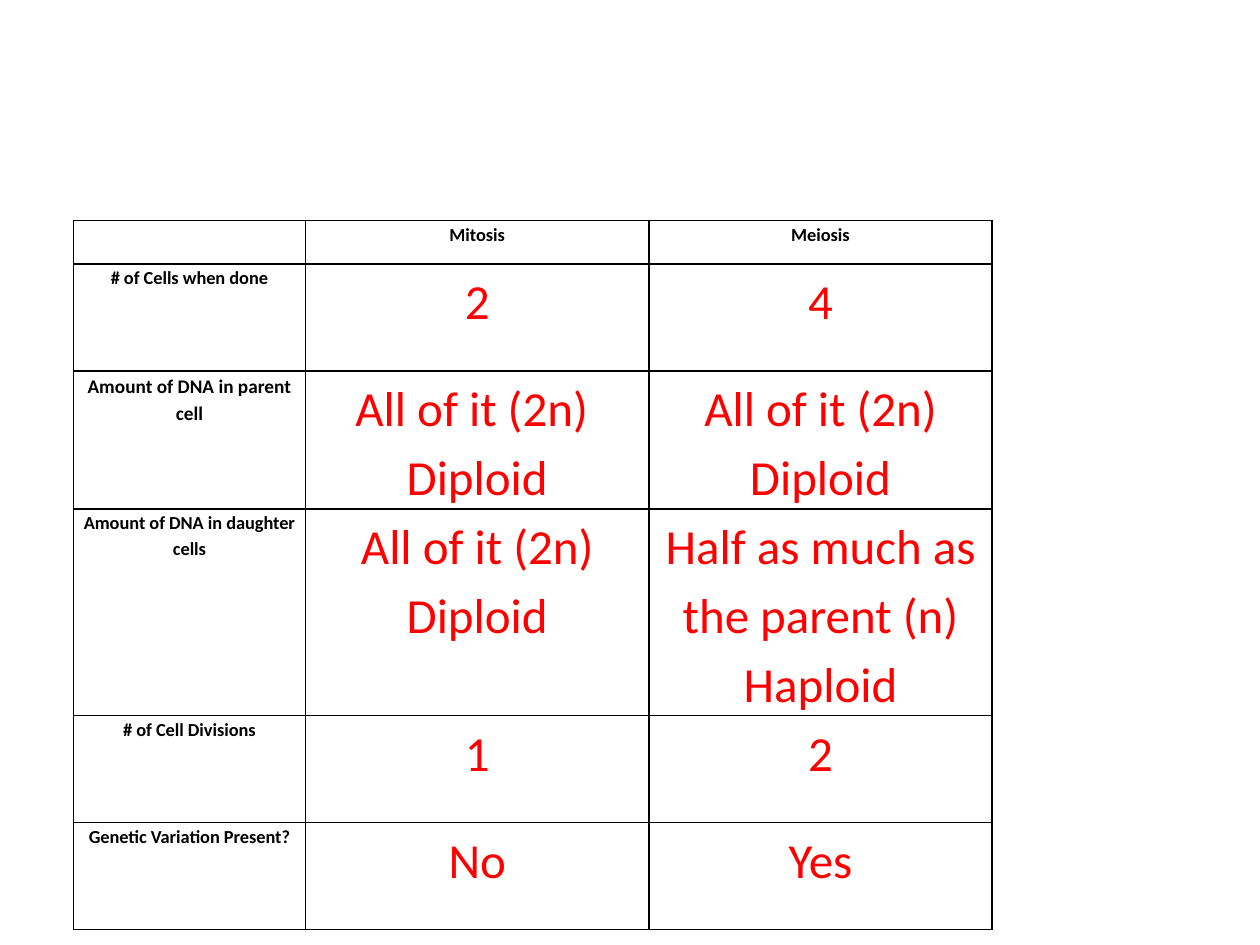
from pptx import Presentation
from pptx.dml.color import RGBColor
from pptx.enum.text import PP_ALIGN
from pptx.oxml import parse_xml
from pptx.oxml.ns import nsdecls
from pptx.util import Cm, Pt

BLACK = RGBColor(0x00, 0x00, 0x00)
RED = RGBColor(0xFF, 0x00, 0x00)

COLS = [4.68, 6.92, 6.92]
ROWS = [0.87] + [2.16] * 5
CELLS = [
    ["", "Mitosis", "Meiosis"],
    ["# of Cells when done", "2", "4"],
    ["Amount of DNA in parent cell", "All of it (2n) \nDiploid", "All of it (2n)\nDiploid"],
    ["Amount of DNA in daughter cells", "All of it (2n)\nDiploid",
     "Half as much as the parent (n)\nHaploid"],
    ["# of Cell Divisions", "1", "2"],
    ["Genetic Variation Present?", "No", "Yes"],
]
LARGER_LABEL = "Amount of DNA in parent cell"


def add_borders(cell):
    props = cell._tc.get_or_add_tcPr()
    for pos, side in enumerate(("lnL", "lnR", "lnT", "lnB")):
        # Border lines must precede the fill
        props.insert(pos, parse_xml(
            f'<a:{side} {nsdecls("a")} w="{Pt(1)}"><a:solidFill>'
            f'<a:srgbClr val="{BLACK}"/></a:solidFill></a:{side}>'))


def fill_cell(cell, text, size, color, bold):
    cell.margin_left = cell.margin_right = Cm(0.18)
    cell.margin_top = cell.margin_bottom = 0
    cell.fill.background()
    add_borders(cell)
    if not text:
        return
    cell.text = text
    for para in cell.text_frame.paragraphs:
        para.alignment = PP_ALIGN.CENTER
        para.line_spacing = 1.15
        font = para.font
        font.name, font.size, font.bold = "Calibri", Pt(size), bold
        font.color.rgb = color


def add_grid(slide):
    frame = slide.shapes.add_table(len(ROWS), len(COLS), Cm(1.48), Cm(4.45),
                                   Cm(sum(COLS)), Cm(sum(ROWS)))
    table = frame.table
    table.first_row = table.horz_banding = False
    for col, width in zip(table.columns, COLS):
        col.width = Cm(width)
    for row, height in zip(table.rows, ROWS):
        row.height = Cm(height)
    for r, texts in enumerate(CELLS):
        for c, text in enumerate(texts):
            if r and c:
                style = 28, RED, False
            else:
                style = 11 if text == LARGER_LABEL else 10.5, BLACK, True
            fill_cell(table.cell(r, c), text, *style)


def main():
    deck = Presentation()
    deck.slide_width, deck.slide_height = Cm(25.4), Cm(19.05)
    slide = deck.slides.add_slide(deck.slide_layouts[6])
    add_grid(slide)
    deck.save("out.pptx")


if __name__ == "__main__":
    main()
